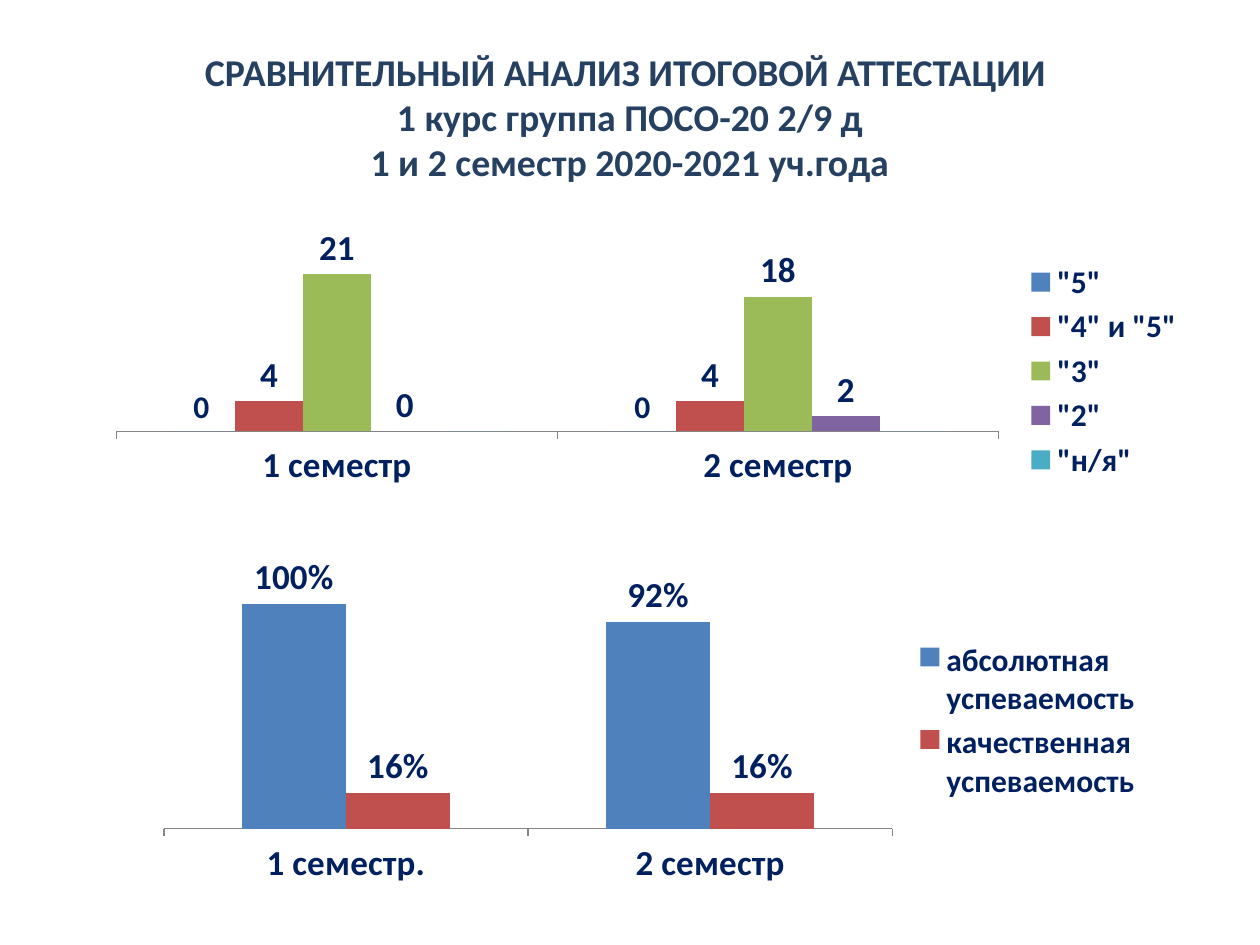
import pptx
import pptx.chart.data
import pptx.dml.color
import pptx.enum.chart
import pptx.enum.text
import pptx.oxml
import pptx.util

Inches = pptx.util.Inches
RGB = pptx.dml.color.RGBColor
TITLE = RGB(0x25, 0x40, 0x61)
NAVY = RGB(0x00, 0x20, 0x60)
GREY = RGB(0x86, 0x86, 0x86)
FILLS = [
    RGB(0x4F, 0x81, 0xBD),
    RGB(0xC0, 0x50, 0x4D),
    RGB(0x9B, 0xBB, 0x59),
    RGB(0x80, 0x64, 0xA2),
    RGB(0x4B, 0xAC, 0xC6),
]
CHART_NS = "http://schemas.openxmlformats.org/drawingml/2006/chart"


def style(font, size, color=NAVY):
    font.name = "Calibri"
    font.size = pptx.util.Pt(size)
    font.bold = True
    font.color.rgb = color


def add_title(slide, lines):
    title = slide.shapes.title
    title.left, title.top = Inches(0.5), Inches(0.3)
    title.width, title.height = Inches(9), Inches(1.25)
    frame = title.text_frame
    frame.text = "\v".join(lines)
    frame.vertical_anchor = pptx.enum.text.MSO_ANCHOR.MIDDLE
    para = frame.paragraphs[0]
    para.alignment = pptx.enum.text.PP_ALIGN.CENTER
    for run in para.runs:
        style(run.font, 21.6, TITLE)


def place_plot(chart, box):
    """Fix the inner plot area as fractions (x, y, w, h) of the chart."""
    area = chart._chartSpace.chart.plotArea
    for old in area.findall(f"{{{CHART_NS}}}layout"):
        area.remove(old)
    sizes = "".join(f'<c:{tag} val="{val}"/>' for tag, val in zip("xywh", box))
    area.insert(0, pptx.oxml.parse_xml(
        f'<c:layout xmlns:c="{CHART_NS}"><c:manualLayout>'
        '<c:layoutTarget val="inner"/><c:xMode val="edge"/><c:yMode val="edge"/>'
        f'{sizes}</c:manualLayout></c:layout>'))


def add_labels(series, size, form):
    labels = series.data_labels
    labels.show_value = True
    labels.number_format = form
    labels.number_format_is_linked = False
    labels.position = pptx.enum.chart.XL_LABEL_POSITION.OUTSIDE_END
    style(labels.font, size)


def add_legend(chart, rows):
    """Show the legend at the right, without entries for empty series."""
    chart.has_legend = True
    legend = chart.legend
    legend.position = pptx.enum.chart.XL_LEGEND_POSITION.RIGHT
    legend.include_in_layout = False
    style(legend.font, 18)
    place = legend._element.find(f"{{{CHART_NS}}}legendPos")
    for num, (name, vals) in enumerate(rows):
        if not vals:
            place.addnext(pptx.oxml.parse_xml(
                f'<c:legendEntry xmlns:c="{CHART_NS}"><c:idx val="{num}"/>'
                '<c:delete val="1"/></c:legendEntry>'))


def add_columns(slide, at, cats, rows, sizes, form, top, plot):
    """Draw clustered columns; a series without a label size gets no labels."""
    data = pptx.chart.data.CategoryChartData(number_format=form)
    data.categories = cats
    for name, vals in rows:
        data.add_series(name, vals)
    chart = slide.shapes.add_chart(
        pptx.enum.chart.XL_CHART_TYPE.COLUMN_CLUSTERED,
        *map(Inches, at), data).chart
    chart.has_title = False
    chart.font.name = "Calibri"
    chart.font.size = pptx.util.Pt(10)
    place_plot(chart, plot)

    bars = chart.plots[0]
    bars.gap_width = 150
    bars.overlap = 0
    bars.vary_by_categories = False
    for series, fill, size in zip(bars.series, FILLS, sizes):
        series.format.fill.solid()
        series.format.fill.fore_color.rgb = fill
        if size:
            add_labels(series, size, form)

    axis = chart.category_axis
    axis.major_tick_mark = pptx.enum.chart.XL_TICK_MARK.OUTSIDE
    axis.format.line.color.rgb = GREY
    style(axis.tick_labels.font, 20)
    scale = chart.value_axis
    scale.visible = False
    scale.has_major_gridlines = False
    scale.minimum_scale, scale.maximum_scale = 0, top
    scale.tick_labels.number_format = form
    scale.tick_labels.number_format_is_linked = False
    add_legend(chart, rows)


def main():
    deck = pptx.Presentation()
    deck.slide_width, deck.slide_height = Inches(10), Inches(7.5)
    slide = deck.slides.add_slide(deck.slide_layouts[5])
    add_title(slide, [
        "СРАВНИТЕЛЬНЫЙ АНАЛИЗ ИТОГОВОЙ АТТЕСТАЦИИ ",
        "1 курс группа ПОСО-20 2/9 д",
        "1 и 2 семестр 2020-2021 уч.года",
    ])
    marks = [
        ('"5"', (0, 0)),
        ('"4" и "5"', (4, 4)),
        ('"3"', (21, 18)),
        ('"2"', (0, 2)),
        ('"н/я"', (0, 0)),
    ]
    add_columns(slide, (0.75, 1.75, 8.75, 2.39), ["1 семестр", "2 семестр"],
                marks, [18, 20, 20, 20, None], "General", 25,
                (0.02, 0.08, 0.8, 0.62))
    rates = [
        ("абсолютная успеваемость", (1, 0.92)),
        ("качественная успеваемость", (0.16, 0.16)),
        ("Ряд 3", ()),
    ]
    add_columns(slide, (1.14, 4.38, 8.03, 2.68), ["1 семестр.", "2 семестр"],
                rates, [20, 20, None], "0%", 1.2, (0.02, 0.02, 0.72, 0.8))
    deck.save("out.pptx")


if __name__ == "__main__":
    main()
